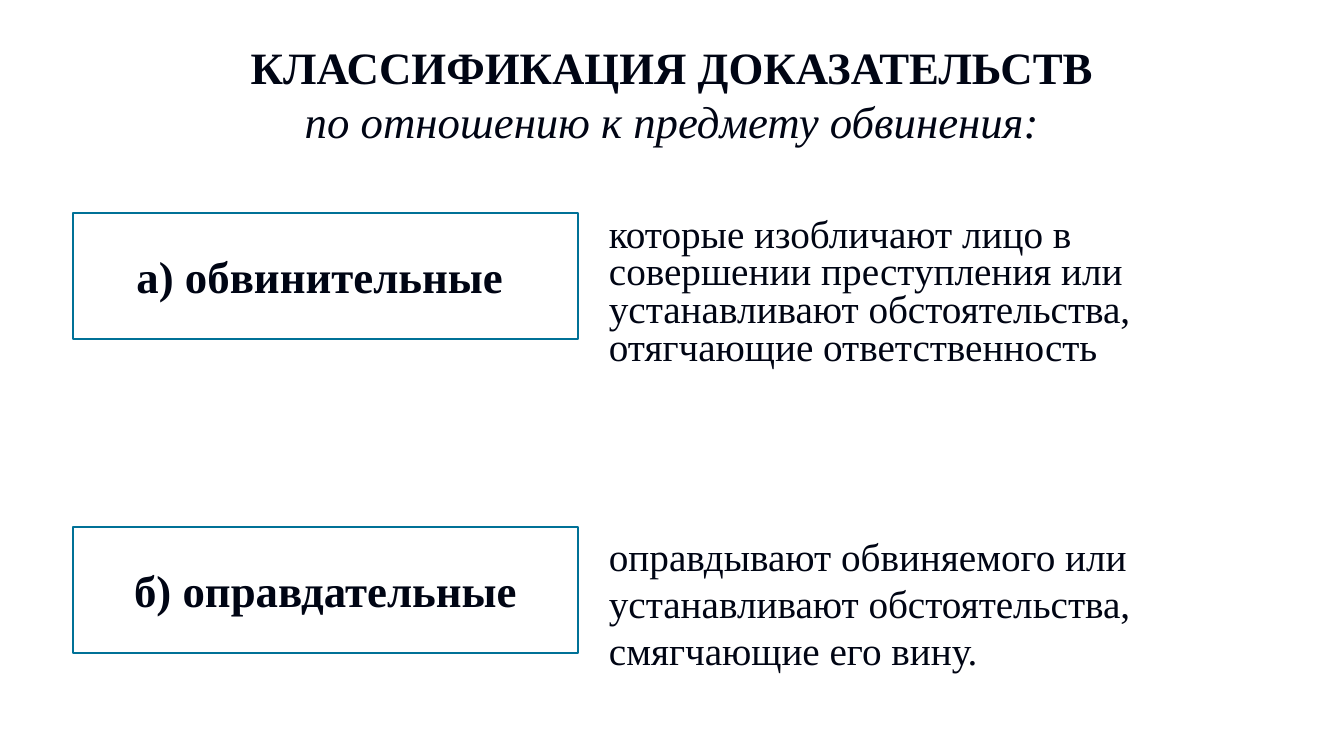
from dataclasses import dataclass

from pptx import Presentation
from pptx.dml.color import RGBColor
from pptx.enum.shapes import MSO_SHAPE
from pptx.enum.text import MSO_ANCHOR, PP_ALIGN
from pptx.shapes.autoshape import Shape
from pptx.slide import Slide
from pptx.util import Emu, Pt

RECTANGLE = MSO_SHAPE.RECTANGLE
TOP, MIDDLE = MSO_ANCHOR.TOP, MSO_ANCHOR.MIDDLE
LEFT, CENTER = PP_ALIGN.LEFT, PP_ALIGN.CENTER

PX_PER_INCH = 100.8
PAGE_WIDTH, PAGE_HEIGHT = 1344, 756
LABEL_LEFT, LABEL_WIDTH, LABEL_HEIGHT = 73, 505, 126
DESCRIPTION_LEFT = 599
FONT = "Times New Roman"
COLORS = {"text": "000514", "border": "007197", "fill": "FFFFFF"}


@dataclass(frozen=True)
class EvidenceKind:
    top: int
    label: str
    description: tuple[str, ...]
    width: int
    height: int
    line_spacing: float


EVIDENCE_KINDS = (
    EvidenceKind(
        213,
        "а) обвинительные ",
        (
            "которые изобличают лицо в совершении преступления или "
            "устанавливают обстоятельства, отягчающие ответственность",
        ),
        680, 197, 0.8,
    ),
    EvidenceKind(
        527,
        "б) оправдательные",
        (
            "оправдывают обвиняемого или устанавливают обстоятельства,",
            "смягчающие его вину.",
        ),
        745, 205, 1.0,
    ),
)


def px(length: int) -> Emu:
    return Emu(round(length * 914400 / PX_PER_INCH))


def color(name: str) -> RGBColor:
    return RGBColor.from_string(COLORS[name])


def add_text(box: Shape, text: str, *, size: int, bold: bool = False,
             italic: bool = False, align: PP_ALIGN = LEFT,
             line_spacing: float = 1.0) -> None:
    frame = box.text_frame
    para = frame.paragraphs[0]
    if para.runs:
        para = frame.add_paragraph()
    para.alignment = align
    para.line_spacing = line_spacing
    span = para.add_run()
    span.text = text
    span.font.name = FONT
    span.font.size = Pt(size)
    span.font.bold = bold
    span.font.italic = italic
    span.font.color.rgb = color("text")


def add_text_box(page: Slide, left: int, top: int, width: int,
                 height: int) -> Shape:
    box = page.shapes.add_textbox(px(left), px(top), px(width), px(height))
    box.text_frame.word_wrap = True
    box.text_frame.vertical_anchor = TOP
    return box


def add_title(page: Slide) -> None:
    box = add_text_box(page, 0, 0, PAGE_WIDTH, 134)
    box.text_frame.margin_top = px(40)
    add_text(box, "КЛАССИФИКАЦИЯ ДОКАЗАТЕЛЬСТВ", size=32, bold=True,
             align=CENTER)
    add_text(box, "по отношению к предмету обвинения:", size=32, italic=True,
             align=CENTER)


def add_evidence_kind(page: Slide, kind: EvidenceKind) -> None:
    label = page.shapes.add_shape(
        RECTANGLE, px(LABEL_LEFT), px(kind.top), px(LABEL_WIDTH),
        px(LABEL_HEIGHT))
    label.shadow.inherit = False
    label.fill.solid()
    label.fill.fore_color.rgb = color("fill")
    label.line.color.rgb = color("border")
    label.line.width = Pt(2)
    label.text_frame.word_wrap = True
    label.text_frame.vertical_anchor = MIDDLE
    add_text(label, kind.label, size=32, bold=True, align=CENTER)

    box = add_text_box(page, DESCRIPTION_LEFT, kind.top, kind.width,
                       kind.height)
    for text in kind.description:
        add_text(box, text, size=28, line_spacing=kind.line_spacing)


def main() -> None:
    deck = Presentation()
    deck.slide_width = px(PAGE_WIDTH)
    deck.slide_height = px(PAGE_HEIGHT)
    page = deck.slides.add_slide(deck.slide_layouts[6])
    add_title(page)
    for kind in EVIDENCE_KINDS:
        add_evidence_kind(page, kind)
    deck.save("out.pptx")


if __name__ == "__main__":
    main()
